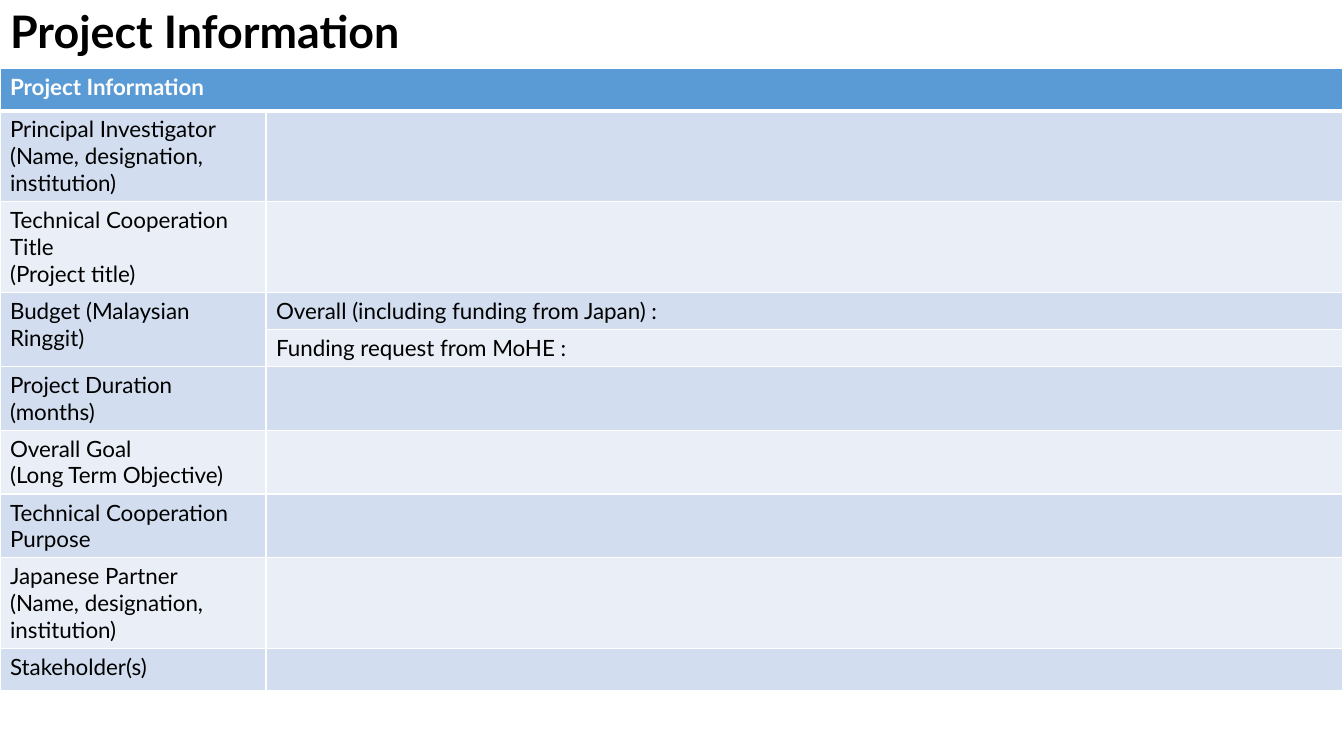
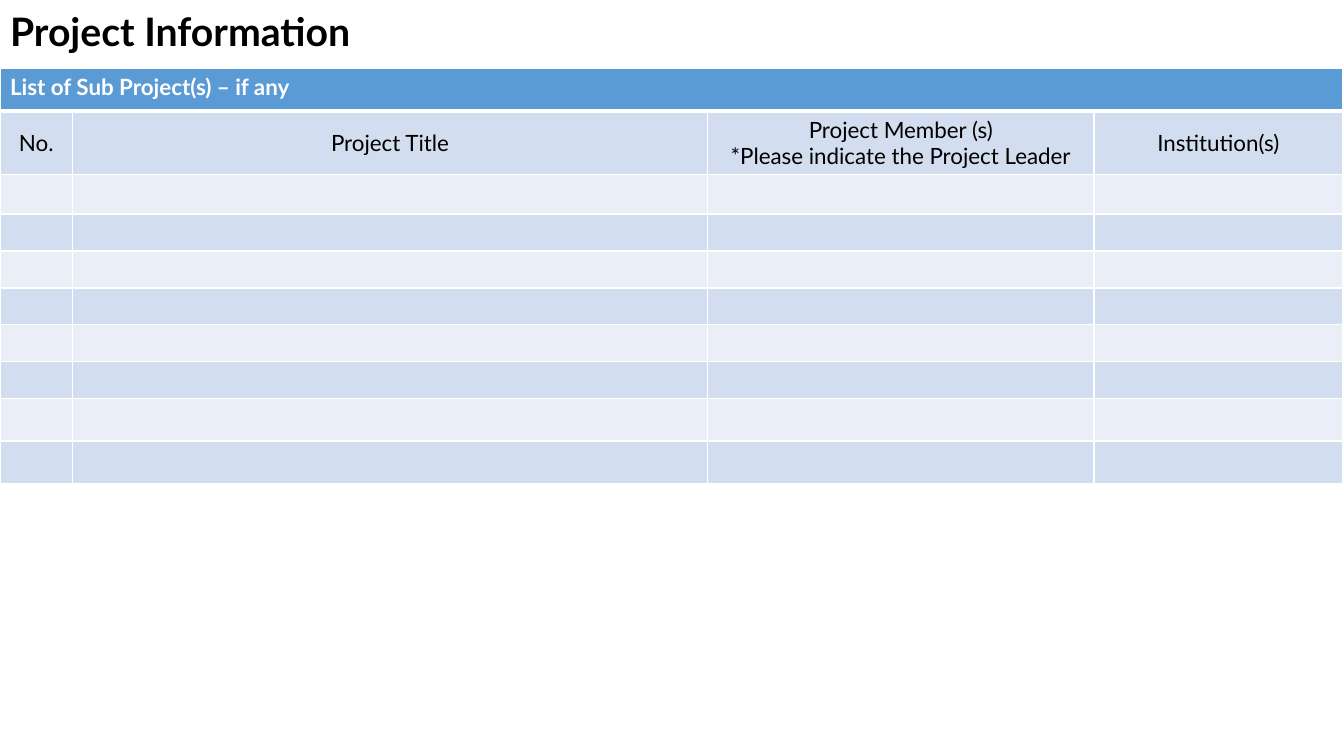
from lxml import etree
from pptx import Presentation, util as u
from pptx.dml.color import RGBColor
from pptx.enum import text
from pptx.oxml.ns import qn

COLORS = {"ink": "000000", "paper": "FFFFFF", "header": "5B9BD5",
          "dark_band": "D2DEEF", "light_band": "EAEFF7"}
FONT = "Lato"
BODY_SIZE = 16
TITLE_WIDTH, TITLE_HEIGHT = 70.74, 9.07
HEADER_ROW, MIDDLE_ROW = 5.6, 5.2
ONE_LINE, TWO_LINES, THREE_LINES = (1.33 + 3.56 * n for n in (1, 2, 3))


class Deck:
    def __init__(self):
        self.prs = Presentation()
        self.prs.slide_width = u.Inches(13.33)
        self.prs.slide_height = u.Inches(7.5)
        self.s = None

    def x(self, percent):
        return round(self.prs.slide_width * percent / 100)

    def y(self, percent):
        return round(self.prs.slide_height * percent / 100)

    def style(self, p, size, color, bold=False, align=text.PP_ALIGN.LEFT):
        p.alignment = align
        p.font.name = FONT
        p.font.size = u.Pt(size)
        p.font.bold = bold
        p.font.color.rgb = RGBColor.from_string(COLORS[color])

    def slide(self, title, size):
        self.s = self.prs.slides.add_slide(self.prs.slide_layouts[5])
        sp = self.s.shapes.title
        sp.left, sp.top = 0, 0
        sp.width, sp.height = self.x(TITLE_WIDTH), self.y(TITLE_HEIGHT)
        tf = sp.text_frame
        tf.text = title
        tf.word_wrap = True
        tf.auto_size = text.MSO_AUTO_SIZE.NONE
        tf.vertical_anchor = text.MSO_ANCHOR.MIDDLE
        p = tf.paragraphs[0]
        p.line_spacing = 0.9
        self.style(p, size, "ink", bold=True)

    def borders(self, cell, top, bottom):
        tc_pr = cell._tc.get_or_add_tcPr()
        widths = {"a:lnL": 1, "a:lnR": 1, "a:lnT": top, "a:lnB": bottom}
        for i, (side, width) in enumerate(widths.items()):
            ln = etree.Element(qn(side), w=str(u.Pt(width)))
            fill = etree.SubElement(ln, qn("a:solidFill"))
            etree.SubElement(fill, qn("a:srgbClr"), val=COLORS["paper"])
            tc_pr.insert(i, ln)

    def cell(self, cell, row, words, centered):
        header = row == 0
        band = "header" if header else ("light_band", "dark_band")[row % 2]
        cell.fill.solid()
        cell.fill.fore_color.rgb = RGBColor.from_string(COLORS[band])
        self.borders(cell, 3 if row == 1 else 1, 3 if header else 1)
        cell.text = words
        if centered:
            cell.vertical_anchor = text.MSO_ANCHOR.MIDDLE
        align = text.PP_ALIGN.CENTER if centered else text.PP_ALIGN.LEFT
        for p in cell.text_frame.paragraphs:
            self.style(p, BODY_SIZE, "paper" if header else "ink", header, align)
            if not words:
                p._p.get_or_add_endParaRPr().set("sz", str(BODY_SIZE * 100))

    def table(self, columns, rows, content, centered_row=None):
        frame = self.s.shapes.add_table(len(rows), len(columns), 0, self.y(TITLE_HEIGHT),
                                        self.x(sum(columns)), self.y(sum(rows)))
        table = frame.table
        table.horz_banding = False
        for column, width in zip(table.columns, columns):
            column.width = self.x(width)
        for r, height in enumerate(rows):
            table.rows[r].height = self.y(height)
            for c in range(len(columns)):
                self.cell(table.cell(r, c), r, content.get((r, c), ""), r == centered_row)
        table.cell(0, 0).merge(table.cell(0, len(columns) - 1))
        return table


def main():
    deck = Deck()

    deck.slide("Project Information", 32)
    labels = {
        0: "Project Information",
        1: "Principal Investigator\n(Name, designation, institution)",
        2: "Technical Cooperation Title\n(Project title)",
        3: "Budget (Malaysian Ringgit)",
        5: "Project Duration (months)",
        6: "Overall Goal\n(Long Term Objective)",
        7: "Technical Cooperation Purpose",
        8: "Japanese Partner\n(Name, designation, institution)",
        9: "Stakeholder(s)",
    }
    content = {(r, 0): label for r, label in labels.items()}
    content[3, 1] = "Overall (including funding from Japan) :"
    content[4, 1] = "Funding request from MoHE :"
    rows = [HEADER_ROW, THREE_LINES, THREE_LINES, ONE_LINE, ONE_LINE,
            TWO_LINES, TWO_LINES, TWO_LINES, THREE_LINES, HEADER_ROW]
    table = deck.table([19.8, 80.1], rows, content)
    table.cell(3, 0).merge(table.cell(4, 0))

    deck.slide("Project Information", 28)
    headings = ["No.", "Project Title",
                "Project Member (s)\n*Please indicate the Project Leader", "Institution(s)"]
    content = {(1, c): heading for c, heading in enumerate(headings)}
    content[0, 0] = "List of Sub Project(s) – if any"
    rows = [HEADER_ROW, TWO_LINES, MIDDLE_ROW] + [ONE_LINE] * 5 + [HEADER_ROW] * 2
    deck.table([5.4, 47.25, 28.75, 18.5], rows, content, centered_row=1)

    deck.prs.save("out.pptx")


if __name__ == "__main__":
    main()
